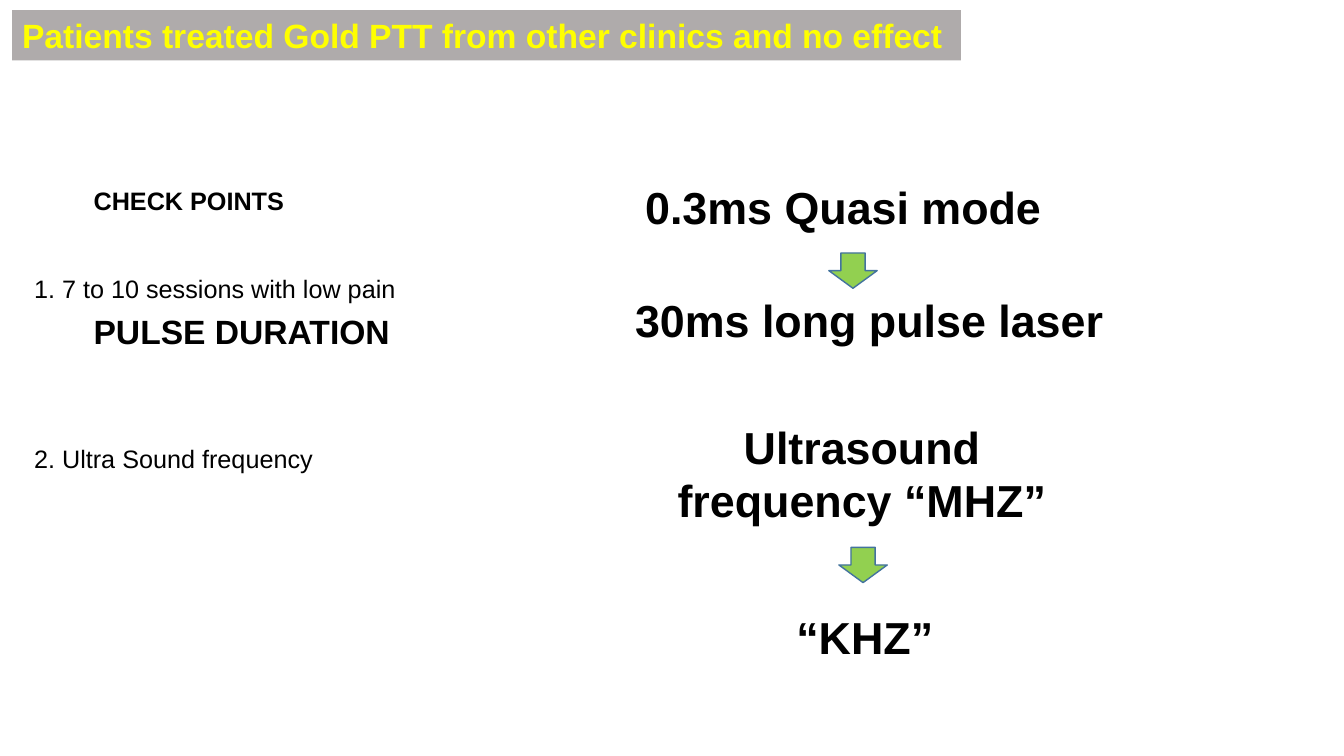
import pptx
import pptx.util
import pptx.dml.color
import pptx.enum.shapes
import pptx.enum.text

Inches = pptx.util.Inches
SHAPE = pptx.enum.shapes.MSO_SHAPE
ALIGN = pptx.enum.text.PP_ALIGN

COLORS = {
    "black": "000000",
    "yellow": "FFFF00",
    "gray": "AFABAB",
    "green": "92D050",
    "outline": "43739E",
}


def rgb(name):
    return pptx.dml.color.RGBColor.from_string(COLORS[name])


def write_text(sp, text, size, bold, color="black", align=ALIGN.LEFT, wrap=True):
    tf = sp.text_frame
    frame_format = {
        "word_wrap": wrap,
        "auto_size": pptx.enum.text.MSO_AUTO_SIZE.SHAPE_TO_FIT_TEXT,
        "vertical_anchor": pptx.enum.text.MSO_ANCHOR.TOP,
    }
    for name, value in frame_format.items():
        setattr(tf, name, value)
    p = tf.paragraphs[0]
    p.alignment = align
    r = p.add_run()
    r.text = text
    font_format = {"name": "Arial", "size": pptx.util.Pt(size), "bold": bold}
    for name, value in font_format.items():
        setattr(r.font, name, value)
    r.font.color.rgb = rgb(color)


def add_label(s, box, text, size, bold=True, align=ALIGN.LEFT):
    sp = s.shapes.add_textbox(*map(Inches, box))
    write_text(sp, text, size, bold, align=align)


def add_filled(s, kind, box, fill, line=None):
    sp = s.shapes.add_shape(kind, *map(Inches, box))
    sp.shadow.inherit = False
    sp.fill.solid()
    sp.fill.fore_color.rgb = rgb(fill)
    if line:
        sp.line.color.rgb = rgb(line)
        sp.line.width = pptx.util.Pt(1)
    else:
        sp.line.fill.background()
    return sp


def main():
    prs = pptx.Presentation()
    prs.slide_width, prs.slide_height = Inches(13.33), Inches(7.5)
    s = prs.slides.add_slide(prs.slide_layouts[6])

    # Title bar
    title = add_filled(s, SHAPE.RECTANGLE, (0.12, 0.1, 9.41, 0.5), "gray")
    write_text(title, "Patients treated Gold PTT from other clinics and no effect",
               24, True, color="yellow", wrap=False)

    # Check points on the left
    add_label(s, (0.83, 1.79, 2.28, 0.4), "CHECK POINTS", 18)
    add_label(s, (0.24, 2.66, 5.74, 0.4), "1. 7 to 10 sessions with low pain", 18, bold=False)
    add_label(s, (0.83, 3.04, 3.62, 0.5), "PULSE DURATION", 24)
    add_label(s, (0.24, 4.35, 5.74, 0.4), "2. Ultra Sound frequency", 18, bold=False)

    # Changes on the right
    add_label(s, (6.3, 1.73, 4.5, 0.64), "0.3ms Quasi mode", 32)
    add_label(s, (6.2, 2.86, 4.99, 0.64), "30ms long pulse laser", 32)
    add_label(s, (6.3, 4.11, 4.5, 1.18), "Ultrasound frequency “MHZ”", 32, align=ALIGN.CENTER)
    add_label(s, (7.8, 6, 1.73, 0.64), "“KHZ”", 32)

    # Arrows between before and after
    for left, top in ((8.22, 2.51), (8.32, 5.43)):
        add_filled(s, SHAPE.DOWN_ARROW, (left, top, 0.48, 0.35), "green", "outline")

    prs.save("out.pptx")


if __name__ == "__main__":
    main()
